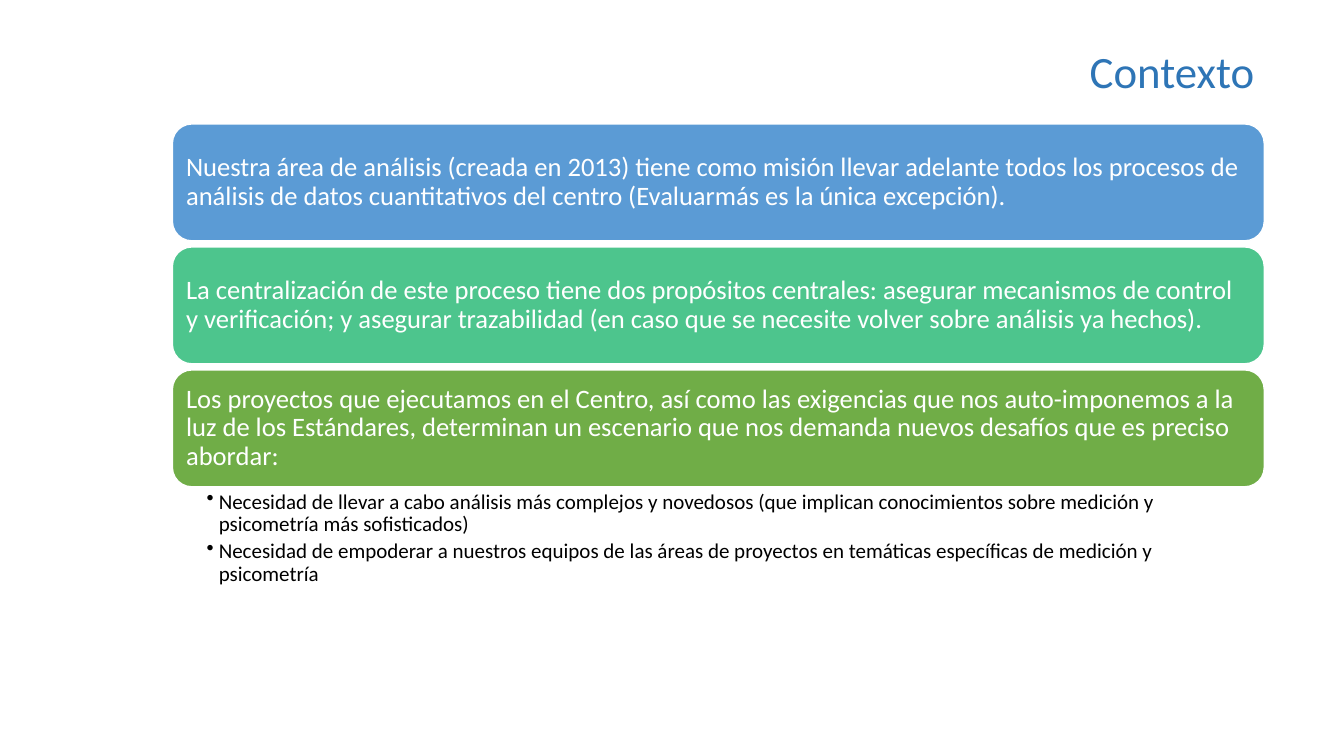
"""Build the "Contexto" slide: three stacked statements and two bullet points."""
from lxml.etree import SubElement
from pptx import Presentation
from pptx.dml.color import RGBColor as RGB
from pptx.enum.shapes import MSO_SHAPE as SHAPE
from pptx.enum.text import MSO_ANCHOR as ANCHOR, PP_ALIGN as ALIGN
from pptx.oxml.ns import qn
from pptx.util import Pt

PX = 9144
THEME = {
    "font": "Calibri",
    "title": RGB(0x2E, 0x75, 0xB6),
    "white": RGB(0xFF, 0xFF, 0xFF),
    "black": RGB(0, 0, 0),
    "cards": [RGB(0x5B, 0x9B, 0xD5), RGB(0x4D, 0xC5, 0x8D), RGB(0x70, 0xAD, 0x47)],
    "title_size": 32,
    "card_size": 19,
    "bullet_size": 15,
}
LEFT, WIDTH = 171, 1083
CARD_TOP, CARD_HEIGHT, CARD_STEP = 123, 116, 122
BULLET_INDENT = 12

STATEMENTS = [
    "Nuestra área de análisis (creada en 2013) tiene como misión llevar adelante todos los procesos de "
    "análisis de datos cuantitativos del centro (Evaluarmás es la única excepción).",
    "La centralización de este proceso tiene dos propósitos centrales: asegurar mecanismos de control "
    "y verificación; y asegurar trazabilidad (en caso que se necesite volver sobre análisis ya hechos).",
    "Los proyectos que ejecutamos en el Centro, así como las exigencias que nos auto-imponemos a la "
    "luz de los Estándares, determinan un escenario que nos demanda nuevos desafíos que es preciso abordar:",
]
NEEDS = [
    "Necesidad de llevar a cabo análisis más complejos y novedosos (que implican conocimientos sobre "
    "medición y psicometría más sofisticados)",
    "Necesidad de empoderar a nuestros equipos de las áreas de proyectos en temáticas específicas de "
    "medición y psicometría",
]


def set_frame(frame, left, top, right, bottom, anchor=ANCHOR.TOP):
    frame.word_wrap = True
    frame.vertical_anchor = anchor
    frame.margin_left, frame.margin_top = left * PX, top * PX
    frame.margin_right, frame.margin_bottom = right * PX, bottom * PX


def write(paragraph, text, size, color, align=ALIGN.LEFT):
    paragraph.text = text
    paragraph.alignment = align
    paragraph.line_spacing = 0.9
    paragraph.font.name = THEME["font"]
    paragraph.font.size = Pt(size)
    paragraph.font.color.rgb = color


presentation = Presentation()
presentation.slide_width, presentation.slide_height = 1333 * PX, 750 * PX
slide = presentation.slides.add_slide(presentation.slide_layouts[6])

title = slide.shapes.add_textbox(LEFT * PX, 44 * PX, WIDTH * PX, 65 * PX)
set_frame(title.text_frame, 10, 5, 10, 5)
write(title.text_frame.paragraphs[0], "Contexto", THEME["title_size"], THEME["title"], ALIGN.RIGHT)

for index, (statement, color) in enumerate(zip(STATEMENTS, THEME["cards"])):
    top = CARD_TOP + index * CARD_STEP
    card = slide.shapes.add_shape(SHAPE.ROUNDED_RECTANGLE, LEFT * PX, top * PX, WIDTH * PX, CARD_HEIGHT * PX)
    card.shadow.inherit = False
    card.fill.solid()
    card.fill.fore_color.rgb = color
    card.line.color.rgb = THEME["white"]
    card.line.width = Pt(1)
    set_frame(card.text_frame, 8, 8, 8, 8, ANCHOR.MIDDLE)
    write(card.text_frame.paragraphs[0], statement, THEME["card_size"], THEME["white"])

needs_box = slide.shapes.add_textbox(LEFT * PX, 484 * PX, WIDTH * PX, 103 * PX)
frame = needs_box.text_frame
set_frame(frame, 34, 3, 15, 3)
for index, need in enumerate(NEEDS):
    paragraph = frame.add_paragraph() if index else frame.paragraphs[0]
    paragraph.level = 1
    properties = paragraph._p.get_or_add_pPr()
    properties.set("marL", str(BULLET_INDENT * PX))
    properties.set("indent", str(-BULLET_INDENT * PX))
    SubElement(properties, qn("a:buChar"), char="•")
    write(paragraph, need, THEME["bullet_size"], THEME["black"])
    paragraph.space_after = Pt(3)

presentation.save("out.pptx")
